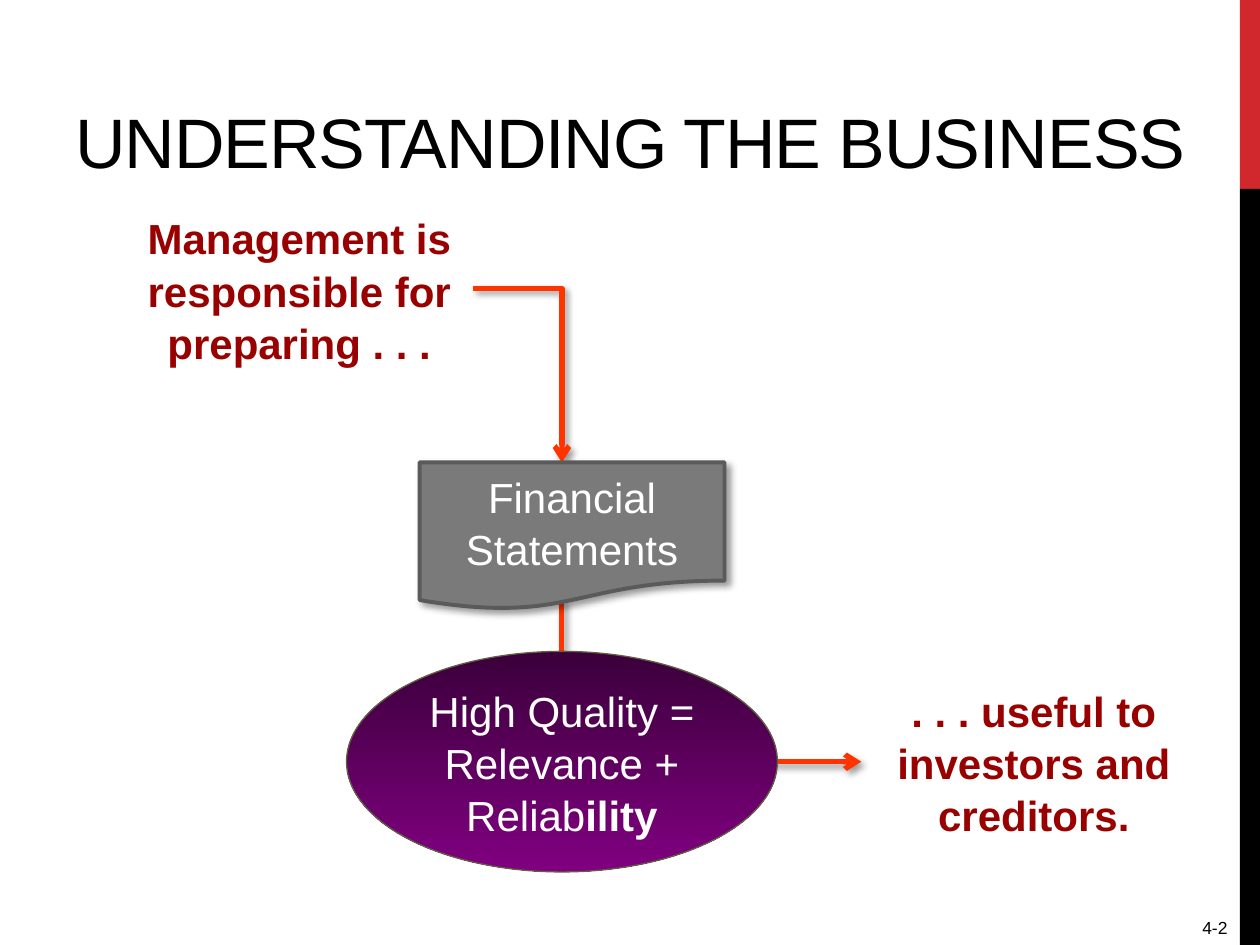
from lxml.etree import SubElement
from pptx import Presentation
from pptx.dml.color import RGBColor
from pptx.enum.shapes import MSO_CONNECTOR, MSO_SHAPE
from pptx.enum.text import MSO_ANCHOR, PP_ALIGN
from pptx.oxml.ns import qn
from pptx.util import Inches, Pt


def color(value):
    return RGBColor.from_string(value)


class SlideBuilder:
    FONT = "Arial"
    ACCENT = "990000"
    ARROW = "FF3300"

    def __init__(self, deck):
        self.shapes = deck.slides.add_slide(deck.slide_layouts[6]).shapes

    def label(self, shape, spans, size=24, ink="FFFFFF", align=PP_ALIGN.CENTER,
              anchor=MSO_ANCHOR.MIDDLE, spacing=1.04):
        """Fill the shape with one paragraph of (text, bold) spans."""
        frame = shape.text_frame
        frame.word_wrap = True
        frame.vertical_anchor = anchor
        para = frame.paragraphs[0]
        para.alignment = align
        para.line_spacing = spacing
        for text, bold in spans:
            for number, line in enumerate(text.split("\n")):
                if number:
                    para.add_line_break()
                span = para.add_run()
                span.text = line
                values = {"name": self.FONT, "size": Pt(size), "bold": bold}
                for name, value in values.items():
                    setattr(span.font, name, value)
                span.font.color.rgb = color(ink)
        return para

    def text(self, place, text, bold=False, **style):
        box = self.shapes.add_textbox(*map(Inches, place))
        return self.label(box, [(text, bold)], **style)

    def shape(self, kind, place, fill, line=None, line_width=0.75):
        """Add a preset shape; a pair of fills makes a top-to-bottom gradient."""
        shape = self.shapes.add_shape(kind, *map(Inches, place))
        shape.shadow.inherit = False
        if isinstance(fill, tuple):
            shape.fill.gradient()
            shape.fill.gradient_angle = 270
            for stop, position, value in zip(shape.fill.gradient_stops, (0, 1), fill):
                stop.position = position
                stop.color.rgb = color(value)
        else:
            shape.fill.solid()
            shape.fill.fore_color.rgb = color(fill)
        if line:
            shape.line.color.rgb = color(line)
            shape.line.width = Pt(line_width)
        else:
            shape.line.fill.background()
        return shape

    def drop_shadow(self, shape):
        properties = shape._element.spPr
        effects = properties.find(qn("a:effectLst"))
        if effects is None:
            effects = SubElement(properties, qn("a:effectLst"))
        shadow = SubElement(effects, qn("a:outerShdw"), blurRad=str(Pt(4)),
                            dist=str(Pt(3)), dir="2700000", rotWithShape="0")
        ink = SubElement(shadow, qn("a:srgbClr"), val="000000")
        SubElement(ink, qn("a:alpha"), val="40000")

    def bent_arrow(self, left, top, width, height, turned=False):
        """Add a one-corner arrow: across then down, or down then across if turned."""
        arrow = self.shapes.add_connector(
            MSO_CONNECTOR.ELBOW, *map(Inches, (left, top, left + width, top + height)))
        properties = arrow._element.spPr
        properties.find(qn("a:prstGeom")).set("prst", "bentConnector2")
        if turned:
            frame = properties.find(qn("a:xfrm"))
            frame.set("rot", "16200000")
            frame.set("flipH", "1")
        arrow.line.color.rgb = color(self.ARROW)
        arrow.line.width = Pt(3)
        SubElement(properties.find(qn("a:ln")), qn("a:tailEnd"), type="arrow")
        self.drop_shadow(arrow)


def main():
    deck = Presentation()
    deck.slide_width, deck.slide_height = Inches(10), Inches(7.5)
    page = SlideBuilder(deck)

    page.shape(MSO_SHAPE.RECTANGLE, (9.84, 0, 0.16, 1.5), "D1282E")
    page.shape(MSO_SHAPE.RECTANGLE, (9.84, 1.5, 0.16, 6), "000000")
    title = page.text((0.5, 0, 9.17, 1.5), "UNDERSTANDING THE BUSINESS", size=40,
                      ink="000000", align=PP_ALIGN.LEFT, anchor=MSO_ANCHOR.BOTTOM,
                      spacing=1.0)
    title.runs[0].font._element.set("spc", "-60")

    for left, top, text in (
            (1, 1.67, "Management is responsible for preparing . . ."),
            (6.83, 5.42, ". . . useful to investors and creditors.")):
        page.text((left, top, 2.75, 1.25), text, bold=True, ink=page.ACCENT)

    page.bent_arrow(5, 4.21, 1.29, 2.38, turned=True)
    page.bent_arrow(3.75, 2.29, 0.71, 1.38)

    quality = page.shape(MSO_SHAPE.OVAL, (2.75, 5.17, 3.42, 1.75),
                         ("3B003B", "800080"), "616042")
    page.label(quality, [("High Quality = Relevance + Reliab", False), ("ility", True)])
    statements = page.shape(MSO_SHAPE.FLOWCHART_DOCUMENT, (3.33, 3.67, 2.42, 1.17),
                            "7A7A7A", "5A5A5A", 2.25)
    page.drop_shadow(statements)
    page.label(statements, [("Financial\nStatements", False)])

    page.text((7.92, 7.23, 1.92, 0.27), "4-2", size=10, ink="000000",
              align=PP_ALIGN.RIGHT, anchor=MSO_ANCHOR.TOP, spacing=1.0)
    deck.save("out.pptx")


if __name__ == "__main__":
    main()
